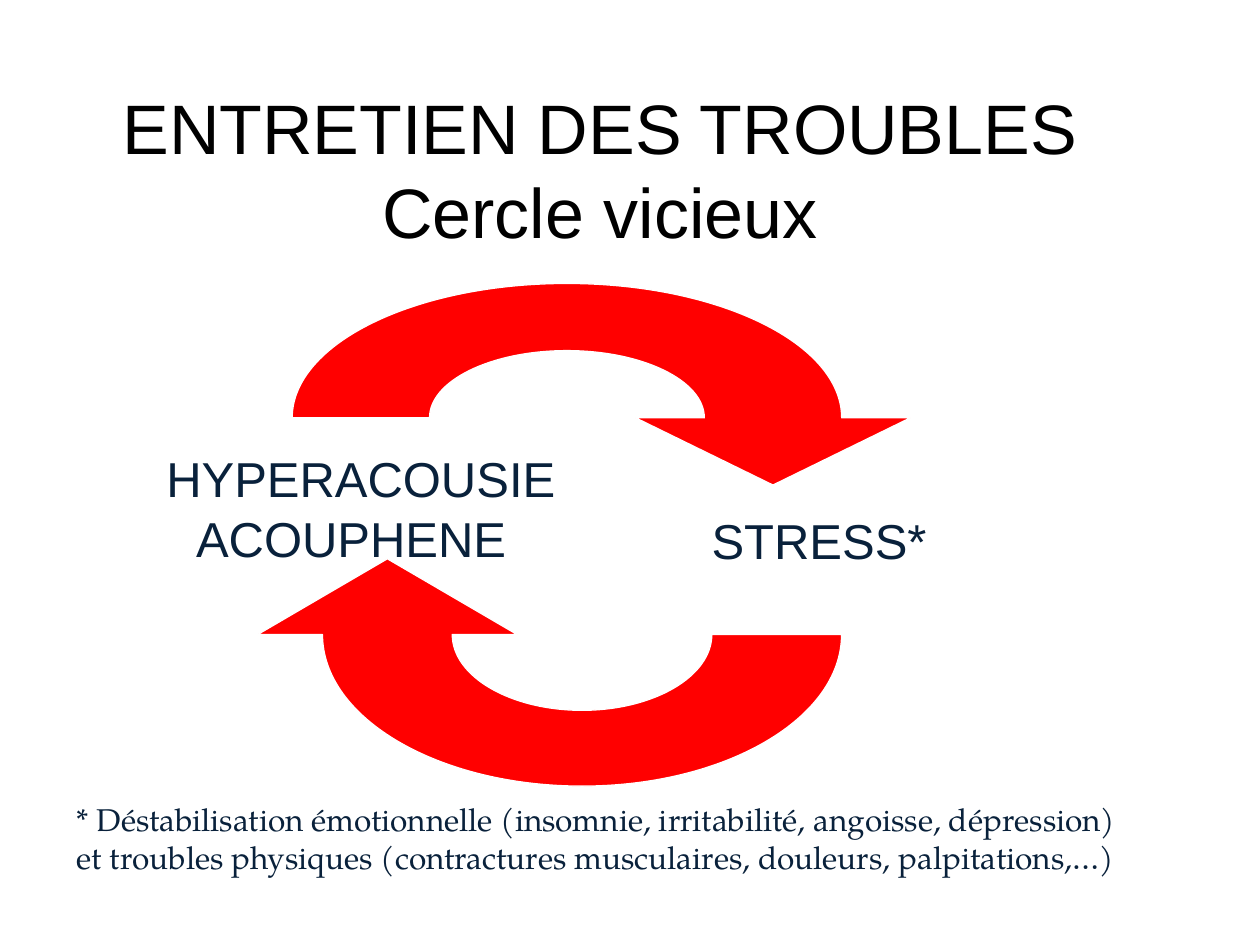
from lxml.etree import SubElement
from pptx import Presentation
from pptx.dml.color import RGBColor
from pptx.enum.text import MSO_ANCHOR, MSO_AUTO_SIZE, PP_ALIGN
from pptx.oxml.ns import qn
from pptx.util import Pt

COLORS = {"red": "FF0000", "edge": "FFFFFF", "navy": "09213B", "title": "000000"}
ROUND = 0.5523  # Bezier handle length for a quarter of an ellipse

# Arrow outline in units of the outer radii: end point, then the corner
# where the tangents of a quarter arc meet (None for a straight side).
OUTLINE = [
    ((0.5, 0), None),
    ((0, -0.5), (0.5, -0.5)),
    ((-0.5, 0), (-0.5, -0.5)),
    ((-1, 0), None),
    ((0, -1), (-1, -1)),
    ((1, 0), (1, -1)),
    ((1.25, 0), None),
    ((0.75, 0.5), None),
    ((0.25, 0), None),
]


def color(name):
    return RGBColor.from_string(COLORS[name])


def blend(start, end):
    return tuple(a + ROUND * (b - a) for a, b in zip(start, end))


def bend(shape, place):
    """Turn the sides that have a corner into curves."""
    lines = list(shape.element.iter(qn("a:lnTo")))
    for line, (last, _), (end, corner) in zip(lines, OUTLINE, OUTLINE[1:]):
        if corner is None:
            continue
        line.tag = qn("a:cubicBezTo")
        line.clear()
        for spot in (blend(last, corner), blend(end, corner), end):
            x, y = place(spot)
            SubElement(line, qn("a:pt"), x=str(x - shape.left), y=str(y - shape.top))


def add_arrow(slide, x, y, rx, ry):
    """Half-ring arrow about (x, y); negative radii turn it by half a turn."""

    def place(spot):
        return Pt(x + rx * spot[0]), Pt(y + ry * spot[1])

    points = [place(end) for end, _ in OUTLINE]
    pen = slide.shapes.build_freeform(*points[0])
    pen.add_line_segments(points[1:], close=True)
    arrow = pen.convert_to_shape()
    bend(arrow, place)
    arrow.shadow.inherit = False
    arrow.fill.solid()
    arrow.fill.fore_color.rgb = color("red")
    arrow.line.color.rgb = color("edge")
    arrow.line.width = Pt(0.75)


def add_text(slide, text, box, size, font="Arial", tint="navy", wrap=False):
    shape = slide.shapes.add_textbox(*map(Pt, box))
    frame = shape.text_frame
    frame.text = text
    frame.word_wrap = wrap
    frame.auto_size = MSO_AUTO_SIZE.SHAPE_TO_FIT_TEXT
    for para in frame.paragraphs:
        for run in para.runs:
            run.font.size = Pt(size)
            run.font.name = font
            run.font.color.rgb = color(tint)
    return frame


def add_title(slide, text, box):
    frame = add_text(slide, text, box, 40, tint="title", wrap=True)
    frame.auto_size = MSO_AUTO_SIZE.NONE
    frame.vertical_anchor = MSO_ANCHOR.MIDDLE
    for para in frame.paragraphs:
        para.alignment = PP_ALIGN.CENTER


def main():
    deck = Presentation()
    deck.slide_width, deck.slide_height = Pt(720), Pt(540)
    slide = deck.slides.add_slide(deck.slide_layouts[6])

    add_arrow(slide, 324, 238.8, 157, 76.8)
    add_arrow(slide, 332.6, 362.6, -148.3, -86.6)

    add_text(slide, "HYPERACOUSIE", (88, 253, 239, 41), 28)
    add_text(slide, "ACOUPHENE", (105, 287, 193, 41), 28)
    add_text(slide, "STRESS*", (399.6, 288, 138, 41), 28)
    note = (
        "* Déstabilisation émotionnelle (insomnie, irritabilité, angoisse, dépression)\n"
        "et troubles physiques (contractures musculaires, douleurs, palpitations,…)"
    )
    add_text(slide, note, (36.8, 453.5, 698, 51), 18, "TeX Gyre Pagella", wrap=True)
    add_title(slide, "ENTRETIEN DES TROUBLES\nCercle vicieux", (36.8, 32, 612, 129))

    deck.save("out.pptx")


if __name__ == "__main__":
    main()
